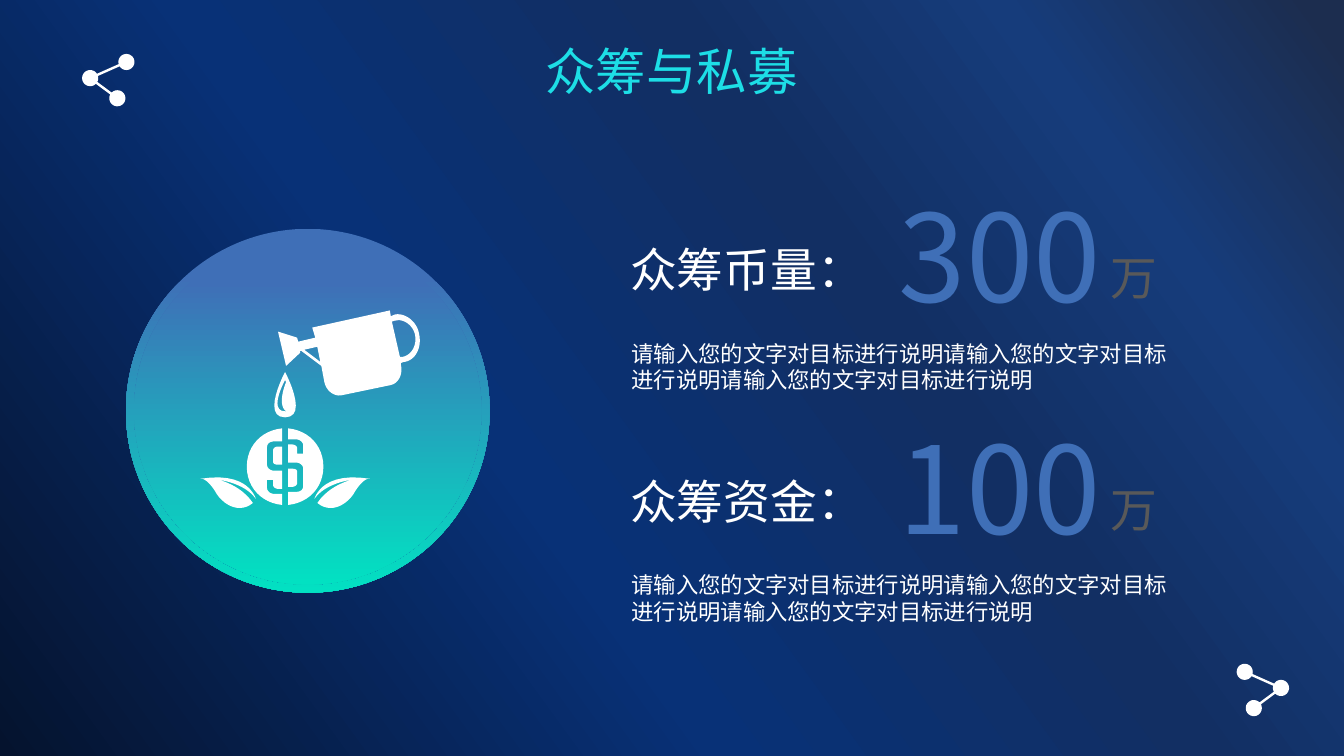
import math

from lxml import etree
from pptx import Presentation
from pptx import util as u
from pptx.dml.color import RGBColor
from pptx.enum import shapes, text
from pptx.oxml import ns

FONT = "Noto Sans CJK SC"
WHITE = RGBColor(0xFF, 0xFF, 0xFF)
CYAN = RGBColor(0x1D, 0xDE, 0xE6)
GRAY = RGBColor(0x59, 0x59, 0x59)
BLUE = RGBColor(0x3F, 0x6F, 0xB7)
MINT = RGBColor(0x02, 0xE1, 0xC2)
AQUA = RGBColor(0x3B, 0xFE, 0xE0)
BACKGROUND = [
    (0, RGBColor(0x05, 0x13, 0x2E)),
    (38, RGBColor(0x08, 0x31, 0x77)),
    (64, RGBColor(0x12, 0x2F, 0x63)),
    (82, RGBColor(0x16, 0x3C, 0x7B)),
    (98, RGBColor(0x1C, 0x2D, 0x4F)),
]
DISC_STOPS = [(13, BLUE), (100, MINT)]
NUMBER_STOPS = [(0, BLUE), (100, AQUA)]
DOWNWARD = 270

LEAF = [[(.29, .32), (.31, .26, .41, .05, .84, .12), (.78, .11, .7, .23, .68, .27),
         (.59, .4, .44, .46, .32, .36), (.44, .18, .66, .13, .66, .13),
         (.66, .13, .4, .16, .29, .32)]]
COIN_HALF = [
    [(.38, 0), (.38, .21, .23, .36, .03, .38), (.03, .25), (.11, .25),
     (.15, .25, .18, .23, .18, .19), (.18, .02), (.18, -.01, .15, -.04, .11, -.04),
     (.03, -.04), (.03, -.22), (.07, -.22), (.1, -.22, .12, -.2, .12, -.18),
     (.12, -.13), (.18, -.13), (.18, -.21), (.18, -.24, .15, -.27, .11, -.27),
     (.03, -.27), (.03, -.38), (.23, -.36, .38, -.21, .38, 0)],
]
COIN_INLAY = [[(.12, .05), (.12, .16), (.12, .18, .1, .2, .07, .2), (.03, .2), (.03, .02),
               (.07, .02), (.1, .02, .12, .03, .12, .05)]]
DROP = [
    [(0, -.94), (0, -.94, .24, -.49, 0, -.49), (-.24, -.49, 0, -.94, 0, -.94)],
    [(.01, -.84), (0, -.86), (0, -.86, -.17, -.55, 0, -.55), (.01, -.55),
     (-.06, -.6, -.03, -.74, .01, -.84)],
]
WATERING_CAN = [
    [(.36, -1), (.16, -1.15), (.15, -1.15), (.15, -1.13), (.01, -1), (-.07, -1.34),
     (.12, -1.28), (.13, -1.24), (.3, -1.28), (.27, -1.38), (1.04, -1.55), (1.05, -1.49),
     (1.06, -1.5, 1.07, -1.5, 1.09, -1.51), (1.19, -1.53, 1.31, -1.44, 1.33, -1.32),
     (1.36, -1.19, 1.3, -1.06, 1.19, -1.04), (1.17, -1.04, 1.16, -1.03, 1.15, -1.03),
     (1.15, -1.01), (1.17, -.92, 1.13, -.83, 1.05, -.81), (.57, -.71),
     (.49, -.69, .41, -.75, .39, -.84)],
    [(.35, -1.04), (.32, -1.19), (.19, -1.16)],
    [(1.17, -1.09), (1.26, -1.11, 1.31, -1.21, 1.29, -1.31),
     (1.27, -1.4, 1.18, -1.47, 1.1, -1.45), (1.08, -1.45, 1.07, -1.44, 1.06, -1.44),
     (1.14, -1.09)],
]
ICON_PARTS = [(LEAF, 1, 1), (WATERING_CAN, 1, 1), (COIN_HALF, 1, 1), (COIN_INLAY, 1, 1),
              (COIN_HALF, -1, -1), (COIN_INLAY, -1, -1), (DROP, 1, 1), (LEAF, -1, 1)]

DESCRIPTION = "请输入您的文字对目标进行说明请输入您的文字对目标进行说明请输入您的文字对目标进行说明"


def paint_gradient(fill, element, stops, angle):
    """Give a fill inside the element its gradient stops and angle."""
    fill.gradient()
    fill.gradient_angle = angle
    stop_list = element.xpath(".//a:gsLst")[0]
    for stop in list(stop_list):
        stop_list.remove(stop)
    for position, color in stops:
        stop = etree.SubElement(stop_list, ns.qn("a:gs"), pos=str(position * 1000))
        etree.SubElement(stop, ns.qn("a:srgbClr"), val=str(color))


def write_text(shape, words, size, color, alignment=text.PP_ALIGN.CENTER):
    """Write one formatted paragraph into a shape and return its font."""
    frame_format = {"word_wrap": True, "auto_size": text.MSO_AUTO_SIZE.NONE,
                    "vertical_anchor": text.MSO_ANCHOR.TOP,
                    "margin_left": u.Inches(.1), "margin_right": u.Inches(.1),
                    "margin_top": u.Inches(.05), "margin_bottom": u.Inches(.05)}
    for name, value in frame_format.items():
        setattr(shape.text_frame, name, value)
    paragraph = shape.text_frame.paragraphs[0]
    paragraph.alignment = alignment
    run = paragraph.add_run()
    run.text = words
    for name, value in {"name": FONT, "size": u.Pt(size)}.items():
        setattr(run.font, name, value)
    run.font.color.rgb = color
    properties = shape.element.xpath(".//a:rPr")[0]
    etree.SubElement(properties, ns.qn("a:ea"), typeface=FONT)
    return run.font


def add_label(slide, box, *content):
    """Add a text box and return it with its font."""
    shape = slide.shapes.add_textbox(*map(u.Inches, box))
    return shape, write_text(shape, *content)


def add_gradient_shape(slide, kind, box):
    """Add a preset shape with the disc gradient, without line or shadow."""
    shape = slide.shapes.add_shape(kind, *map(u.Inches, box))
    shape.shadow.inherit = False
    shape.line.fill.background()
    paint_gradient(shape.fill, shape.element, DISC_STOPS, DOWNWARD)
    return shape


def trace(contour, steps=12):
    """Turn line ends (two numbers) and cubic curves (six) into points."""
    points = [contour[0]]
    for segment in contour[1:]:
        if len(segment) == 2:
            points.append(segment)
            continue
        controls = [points[-1], segment[:2], segment[2:4], segment[4:]]
        for step in range(1, steps + 1):
            t = step / steps
            weights = ((1 - t) ** 3, 3 * t * (1 - t) ** 2, 3 * t * t * (1 - t), t ** 3)
            points.append(tuple(sum(weight * control[axis] for weight, control
                                    in zip(weights, controls)) for axis in (0, 1)))
    return points


def add_outline(slide, center, contours, flip_x, flip_y):
    """Draw white contours around a centre, flipped by the given signs."""
    builder = None
    for contour in contours:
        points = [(u.Inches(center[0] + flip_x * x), u.Inches(center[1] + flip_y * y))
                  for x, y in trace(contour)]
        if builder is None:
            builder = slide.shapes.build_freeform(*points[0], scale=1.0)
        else:
            builder.move_to(*points[0])
        builder.add_line_segments(points[1:], close=True)
    shape = builder.convert_to_shape()
    shape.shadow.inherit = False
    shape.fill.solid()
    shape.fill.fore_color.rgb = WHITE
    shape.line.fill.background()


def add_share_mark(slide, left, top, flip_x=1):
    """Draw three linked dots as one outline in a box of 0.51 inches."""
    half, radius, gap, steps = .255, .08, .15, 24
    upper, hub, lower = (.18, -.18), (-.18, -.02), (.09, .18)
    contour = []
    for before, dot, after in ((hub, upper, hub), (upper, hub, lower),
                               (hub, lower, hub), (lower, hub, upper)):
        start, end = (math.atan2(other[1] - dot[1], other[0] - dot[0])
                      for other in (before, after))
        sweep = (end - start - 2 * gap) % math.tau
        for step in range(steps + 1):
            angle = start + gap + sweep * step / steps
            contour.append((dot[0] + radius * math.cos(angle),
                            dot[1] + radius * math.sin(angle)))
    add_outline(slide, (left + half, top + half), [contour], flip_x, 1)


def add_growth_disc(slide, left, top, side):
    """Draw the gradient disc with the watered coin plant."""
    inset = .08
    inner = side - 2 * inset
    ring = add_gradient_shape(slide, shapes.MSO_SHAPE.DONUT, (left, top, side, side))
    ring.adjustments[0] = .049
    add_gradient_shape(slide, shapes.MSO_SHAPE.OVAL,
                       (left + inset, top + inset, inner, inner))
    for contours, flip_x, flip_y in ICON_PARTS:
        add_outline(slide, (left + 1.58, top + 2.36), contours, flip_x, flip_y)


def add_figure(slide, left, top, label, number):
    """Place a label, its large number, the unit and a description."""
    add_label(slide, (left, top + .59, 2.61, .66), label, 33.4, WHITE)
    shape, font = add_label(slide, (left + 2.23, top, 3.17, 1.56), number, 86.7, BLUE)
    paint_gradient(font.fill, shape.element, NUMBER_STOPS, DOWNWARD)
    add_label(slide, (left + 4.62, top + .67, 1.05, .66), "万", 33.4, GRAY)
    add_label(slide, (left + .06, top + 1.57, 5.61, .91), DESCRIPTION, 16, WHITE,
              text.PP_ALIGN.LEFT)


def add_title(slide, left, top, width, height):
    """Move and format the title placeholder."""
    title = slide.shapes.title
    box = {"left": left, "top": top, "width": width, "height": height}
    for name, value in box.items():
        setattr(title, name, u.Inches(value))
    write_text(title, "众筹与私募", 36, CYAN)


def main():
    """Build and save the crowdfunding slide."""
    presentation = Presentation()
    presentation.slide_width = u.Inches(13.34)
    presentation.slide_height = u.Inches(7.5)
    slide = presentation.slides.add_slide(presentation.slide_layouts[5])
    paint_gradient(slide.background.fill, slide.element, BACKGROUND, 36)
    add_title(slide, 3.75, .35, 5.83, .71)
    add_share_mark(slide, .82, .54)
    add_share_mark(slide, 12.28, 6.59, flip_x=-1)
    add_growth_disc(slide, 1.25, 2.27, 3.61)
    for row, (label, number) in enumerate([("众筹币量：", "300"), ("众筹资金：", "100")]):
        add_figure(slide, 6.11, 1.75 + 2.3 * row, label, number)
    presentation.save("out.pptx")


if __name__ == "__main__":
    main()
